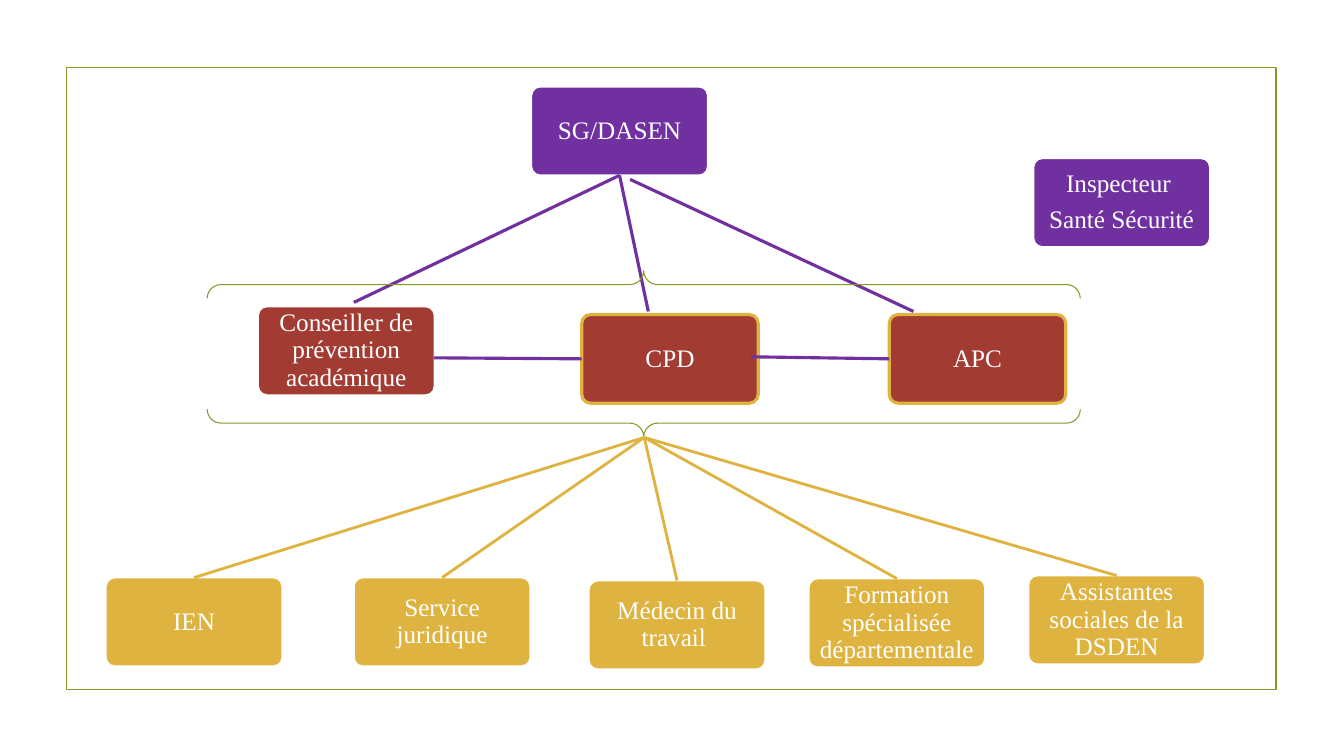
from dataclasses import dataclass
from lxml.etree import SubElement
from pptx import Presentation
from pptx.dml.color import RGBColor
from pptx.enum.shapes import MSO_CONNECTOR, MSO_SHAPE
from pptx.enum.text import MSO_ANCHOR, PP_ALIGN
from pptx.oxml.ns import qn
from pptx.util import Inches, Pt


@dataclass(frozen=True)
class Theme:
    """Colours, font and sizes of the chart."""
    white: str = "FFFFFF"
    green: str = "83992A"
    gold: str = "DEB340"
    red: str = "A23C33"
    purple: str = "7030A0"
    font: str = "Times New Roman"
    size: float = 18
    gap: float = 6.5
    thin: float = 0.75
    edge: float = 1.25
    link: float = 2
    thick: float = 2.25


THEME = Theme()
BOX_W, BOX_H = 1.75, 0.88
TOP, LEFT = 0, 1


def add_form(slide, kind, place, line, width, fill=None):
    """Add an outlined preset shape."""
    form = slide.shapes.add_shape(kind, *map(Inches, place))
    form.shadow.inherit = False
    form.line.color.rgb = RGBColor.from_string(line)
    form.line.width = Pt(width)
    if fill:
        form.fill.solid()
        form.fill.fore_color.rgb = RGBColor.from_string(fill)
    else:
        form.fill.background()
    return form


def add_box(slide, left, top, lines, fill, line=THEME.white, width=THEME.edge):
    """Add a rounded box with centred text."""
    box = add_form(slide, MSO_SHAPE.ROUNDED_RECTANGLE,
                   (left, top, BOX_W, BOX_H), line, width, fill)
    box.adjustments[0] = 0.1
    frame = box.text_frame
    frame.word_wrap = True
    frame.vertical_anchor = MSO_ANCHOR.MIDDLE
    frame.margin_left = frame.margin_right = Inches(0.01)
    frame.margin_top = frame.margin_bottom = Inches(0.01)
    for index, text in enumerate(lines):
        para = frame.add_paragraph() if index else frame.paragraphs[0]
        para.alignment = PP_ALIGN.CENTER
        para.line_spacing = 0.9
        para.space_after = Pt(THEME.gap)
        run = para.add_run()
        run.text = text
        run.font.name = THEME.font
        run.font.size = Pt(THEME.size)
        run.font.color.rgb = RGBColor.from_string(THEME.white)
    return box


def add_link(slide, start, end, color, width):
    """Add a straight line between two points."""
    link = slide.shapes.add_connector(
        MSO_CONNECTOR.STRAIGHT, *map(Inches, (*start, *end)))
    link.line.color.rgb = RGBColor.from_string(color)
    link.line.width = Pt(width)
    SubElement(link._element.spPr, qn("a:effectLst"))
    return link


def add_staff(slide):
    """Add the five gold boxes and return them."""
    staff = [
        (1.05, 5.73, "IEN"),
        (3.51, 5.73, "Service juridique"),
        (5.84, 5.76, "Médecin du travail "),
        (8.02, 5.74, "Formation spécialisée départementale"),
        (10.2, 5.71, "Assistantes sociales de la DSDEN"),
    ]
    return [add_box(slide, left, top, [text], THEME.gold)
            for left, top, text in staff]


def main():
    """Build and save the slide."""
    deck = Presentation()
    deck.slide_width, deck.slide_height = Inches(13.33), Inches(7.5)
    slide = deck.slides.add_slide(deck.slide_layouts[6])
    add_form(slide, MSO_SHAPE.RECTANGLE, (0.66, 0.67, 12, 6.17),
             THEME.green, THEME.edge)

    staff = add_staff(slide)
    add_box(slide, 2.56, 3.04, ["Conseiller de prévention académique"],
            THEME.red)
    cpd, apc = [add_box(slide, left, 3.12, [text], THEME.red,
                        THEME.gold, THEME.thick)
                for left, text in ((5.77, "CPD"), (8.82, "APC"))]
    chief = add_box(slide, 5.27, 0.86, ["SG/DASEN"], THEME.purple)
    add_box(slide, 10.25, 1.57, ["Inspecteur ", "Santé Sécurité"],
            THEME.purple)

    add_link(slide, (6.25, 1.78), (9.06, 3.09), THEME.purple, THEME.thick)
    for end in ((3.51, 3), (6.43, 3.09)):
        link = add_link(slide, (6.14, 1.74), end, THEME.purple, THEME.thick)
        link.begin_connect(chief, 2)
    for box, start, end in ((cpd, (5.77, 3.56), (4.3, 3.55)),
                            (apc, (8.82, 3.56), (7.45, 3.54))):
        link = add_link(slide, start, end, THEME.purple, THEME.thick)
        link.begin_connect(box, LEFT)

    brace = add_form(slide, MSO_SHAPE.DOUBLE_BRACE, (5.56, -0.82, 1.65, 8.66),
                     THEME.green, THEME.thin)
    brace.rotation = 270
    hub = (6.39, 4.34)
    for box in staff:
        link = add_link(slide, hub, hub, THEME.gold, THEME.link)
        link.end_connect(box, TOP)
    deck.save("out.pptx")


if __name__ == "__main__":
    main()
